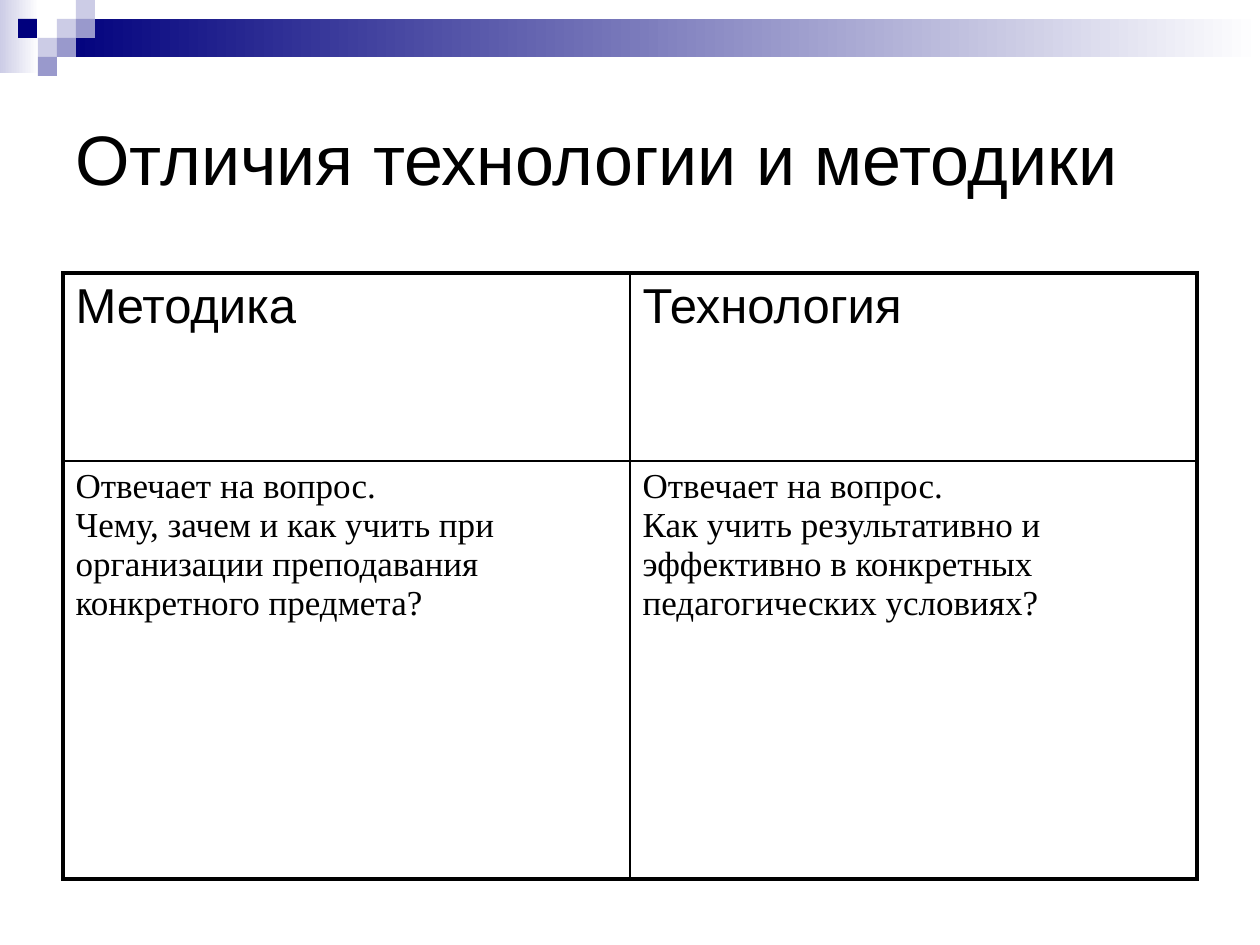
import pptx
import pptx.util
import pptx.dml.color
import pptx.enum.shapes
import pptx.enum.text
import pptx.oxml
import pptx.oxml.ns

RGB = pptx.dml.color.RGBColor
NAVY = RGB(0x00, 0x00, 0x7D)
MID = RGB(0x99, 0x99, 0xCC)
PALE = RGB(0xCC, 0xCC, 0xE6)
WHITE = RGB(0xFF, 0xFF, 0xFF)
BLACK = RGB(0x00, 0x00, 0x00)
HEADS = ["Методика", "Технология"]
BODIES = [
    ["Отвечает на вопрос.",
     "Чему, зачем и как учить при организации преподавания конкретного предмета?"],
    ["Отвечает на вопрос.",
     "Как учить результативно и эффективно в конкретных педагогических условиях?"],
]
TILES = [(2, 1, PALE), (3, 0, PALE), (3, 1, MID), (1, 2, PALE),
         (0, 1, NAVY), (2, 2, MID), (1, 3, MID)]


def px(n):
    """Turn pixels into EMU."""
    return pptx.util.Emu(round(n * 914400 / 126))


def add_run(para, text, size, font):
    """Add one black run to a paragraph."""
    run = para.add_run()
    run.text = text
    run.font.size = pptx.util.Pt(size)
    run.font.name = font
    run.font.bold = False
    run.font.color.rgb = BLACK


def add_rect(slide, box, color, fade=False):
    """Add a plain rectangle, solid or fading to white."""
    kind = pptx.enum.shapes.MSO_SHAPE.RECTANGLE
    shape = slide.shapes.add_shape(kind, *map(px, box))
    shape.shadow.inherit = False
    shape.line.fill.background()
    if fade:
        shape.fill.gradient()
        shape.fill.gradient_angle = 0
        for stop, tone in zip(shape.fill.gradient_stops, (color, WHITE)):
            stop.color.rgb = tone
    else:
        shape.fill.solid()
        shape.fill.fore_color.rgb = color


def add_band(slide, box):
    """Draw the fading bars and the tile pattern at the top."""
    left, top, width, _ = box
    side = 19
    add_rect(slide, (left, top, 39, 73), PALE, True)
    add_rect(slide, (left + 3 * side, top + side, width - 3 * side, 2 * side), NAVY, True)
    for col, row, color in TILES:
        add_rect(slide, (left + 18 + col * side + (col > 0), top + row * side, side, side), color)


def add_title(slide, box, text):
    """Place and format the title."""
    title = slide.shapes.title
    title.left, title.top, title.width, title.height = map(px, box)
    title.element.getparent().append(title.element)
    frame = title.text_frame
    frame.word_wrap = True
    frame.auto_size = pptx.enum.text.MSO_AUTO_SIZE.NONE
    frame.vertical_anchor = pptx.enum.text.MSO_ANCHOR.MIDDLE
    para = frame.paragraphs[0]
    para.alignment = pptx.enum.text.PP_ALIGN.LEFT
    add_run(para, text, 40, "Arial")


def set_edges(cell, thick):
    """Rule a cell, with heavy lines on the sides named in thick."""
    props = cell._tc.get_or_add_tcPr()
    for spot, side in enumerate("LRTB"):
        wide = pptx.util.Pt(2.25 if side in thick else 1)
        props.insert(spot, pptx.oxml.parse_xml(
            f'<a:ln{side} {pptx.oxml.ns.nsdecls("a")} w="{wide}">'
            f'<a:solidFill><a:srgbClr val="{BLACK}"/></a:solidFill></a:ln{side}>'))


def fill_cell(cell, lines, size, font, lead):
    """Write one paragraph per line, with space before as a percentage."""
    cell.fill.background()
    frame = cell.text_frame
    for spot, line in enumerate(lines):
        para = frame.add_paragraph() if spot else frame.paragraphs[0]
        add_run(para, line, size, font)
        para._p.get_or_add_pPr().append(pptx.oxml.parse_xml(
            f'<a:spcBef {pptx.oxml.ns.nsdecls("a")}>'
            f'<a:spcPct val="{lead * 1000}"/></a:spcBef>'))


def add_grid(slide, box):
    """Add the table that compares the two terms."""
    grid = slide.shapes.add_table(2, 2, *map(px, box)).table
    grid.first_row = grid.horz_banding = False
    head = 188
    grid.rows[0].height = px(head)
    grid.rows[1].height = px(box[3] - head)
    for col in range(2):
        grid.columns[col].width = px(box[2] // 2)
        fill_cell(grid.cell(0, col), [HEADS[col]], 28, "Arial", 20)
        fill_cell(grid.cell(1, col), BODIES[col], 20, "Times New Roman", 0)
        for row in range(2):
            set_edges(grid.cell(row, col), "LR"[col] + "TB"[row])


def main():
    """Build and save the slide."""
    deck = pptx.Presentation()
    deck.slide_width, deck.slide_height = px(1260), px(945)
    slide = deck.slides.add_slide(deck.slide_layouts[5])
    add_band(slide, (0, 0, 1260, 76))
    add_title(slide, (63, 63, 1134, 189), "Отличия технологии и методики")
    add_grid(slide, (63, 273, 1134, 606))
    deck.save("out.pptx")


if __name__ == "__main__":
    main()
